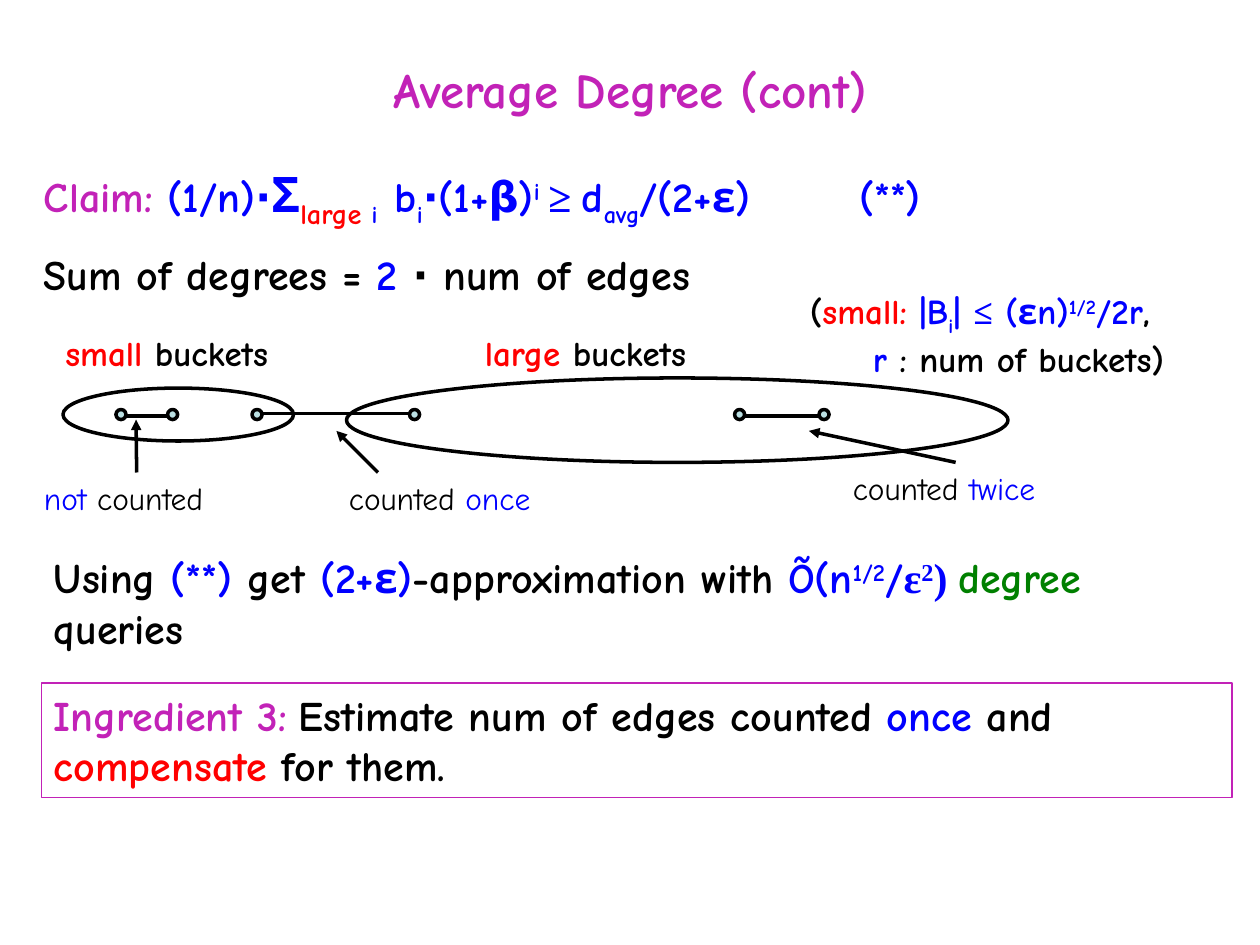
"""Build the slide on estimating the average degree from large and small buckets."""
from lxml import etree
from pptx import Presentation
from pptx.dml.color import RGBColor
from pptx.enum import shapes, text
from pptx.oxml.ns import qn
from pptx.util import Inches, Pt

COMIC, SERIF, SANS = "Comic Neue", "Times New Roman", "DejaVu Sans"
BLACK, BLUE, RED, GREEN, PURPLE = "000000", "0000FF", "FF0000", "008000", "C222B7"
SUB, SUP = "-25000", "30000"
rgb = RGBColor.from_string


def write(sp, size, bold, *lines):
    tf = sp.text_frame
    tf.word_wrap = True
    tf.auto_size = text.MSO_AUTO_SIZE.SHAPE_TO_FIT_TEXT
    tf.vertical_anchor = text.MSO_ANCHOR.TOP
    for n, runs in enumerate(lines):
        p = tf.add_paragraph() if n else tf.paragraphs[0]
        p.alignment = text.PP_ALIGN.LEFT
        if any("\t" in run[0] for run in runs):
            tabs = etree.SubElement(p._p.get_or_add_pPr(), qn("a:tabLst"))
            etree.SubElement(tabs, qn("a:tab"), pos=str(Inches(6.47)), algn="l")
        p.font.size, p.font.bold, p.font.name = Pt(size), bold, COMIC
        for words, color, *style in runs:
            r = p.add_run()
            r.text = words
            r.font.color.rgb = rgb(color)
            for item in style:
                if item in (SUB, SUP):
                    r.font._element.set("baseline", item)
                elif isinstance(item, str):
                    r.font.name = item
                else:
                    r.font.size = Pt(item)


def connect(x1, y1, x2, y2, arrow=False):
    line = s.shapes.add_connector(shapes.MSO_CONNECTOR.STRAIGHT,
                                  Inches(x1), Inches(y1), Inches(x2), Inches(y2))
    line.line.color.rgb = rgb(BLACK)
    line.line.width = Pt(2)
    if arrow:
        etree.SubElement(line.line._get_or_add_ln(), qn("a:tailEnd"), type="triangle")
    etree.SubElement(line._element.spPr, qn("a:effectLst"))
    return line


prs = Presentation()
prs.slide_width, prs.slide_height = Inches(10), Inches(7.5)
s = prs.slides.add_slide(prs.slide_layouts[6])

title = s.shapes.add_textbox(Inches(0.5), Inches(0.33), Inches(9), Inches(0.75))
write(title, 28, True, [("Average Degree (cont)", PURPLE)])
title.text_frame.auto_size = text.MSO_AUTO_SIZE.NONE
title.text_frame.vertical_anchor = text.MSO_ANCHOR.MIDDLE
title.text_frame.paragraphs[0].alignment = text.PP_ALIGN.CENTER

ovals = [(0.5, 3.08, 1.83, 0.42, None), (2.75, 3, 5.25, 0.67, None)]
edges = [(5.83, 6.5, 3.3), (2, 3.25, 3.28), (0.92, 1.33, 3.3)]
ovals += [(x, 3.25, 0.08, 0.08, "BBE0E3") for edge in edges for x in edge[:2]]
for left, top, width, height, fill in ovals:
    sp = s.shapes.add_shape(shapes.MSO_SHAPE.OVAL, Inches(left), Inches(top),
                            Inches(width), Inches(height))
    sp.shadow.inherit = False
    sp.line.color.rgb = rgb(BLACK)
    sp.line.width = Pt(2)
    if fill:
        sp.fill.solid()
        sp.fill.fore_color.rgb = rgb(fill)
    else:
        sp.fill.background()
for x1, x2, y in edges:
    connect(x1 + 0.08, y, x2, y)

statements = [
    (0.25, 1.25, 8.75, 0.57, 24, [[
        ("Claim: ", PURPLE), ("(1/n)⋅", BLUE), ("Σ", BLUE, 28),
        ("large ", RED, 28, SUB), ("i  ", BLUE, SUB), ("b", BLUE), ("i", BLUE, SUB),
        ("⋅(1+", BLUE), ("β", BLUE, SANS), (")", BLUE), ("i ", BLUE, SUP),
        ("≥ ", BLUE, SERIF), ("d", BLUE), ("avg", BLUE, SUB), ("/(2+ε)\t(**)", BLUE)]]),
    (0.25, 1.92, 9.42, 0.5, 24, [[
        ("Sum of degrees = ", BLACK), ("2", BLUE), (" ⋅ num of edges", BLACK)]]),
    (0.42, 2.58, 2, 0.43, 20, [[("small ", RED), ("buckets", BLACK)]]),
    (3.75, 2.58, 2.17, 0.43, 20, [[("large ", RED), ("buckets", BLACK)]]),
    (0.33, 4.33, 9.08, 0.9, 24, [[
        ("Using ", BLACK), ("(**)", BLUE), (" get ", BLACK), ("(2+ε)", BLUE),
        ("-approximation with ", BLACK), ("Õ(n", BLUE), ("1/2", BLUE, SUP), ("/", BLUE),
        ("ε", BLUE, SERIF), ("2", BLUE, SERIF, SUP), (") ", BLUE, SERIF),
        ("degree", GREEN), (" queries", BLACK)]]),
    (6.33, 2.25, 3.67, 0.77, 20, [
        [("(", BLACK), ("small: ", RED), ("|B", BLUE), ("i", BLUE, SUB), ("| ", BLUE),
         ("≤", BLUE, SERIF), (" (εn)", BLUE), ("1/2", BLUE, SUP), ("/2r", BLUE), (",", BLACK)],
        [("r ", BLUE), (": num of buckets)", BLACK)]]),
]
for left, top, width, height, size, lines in statements:
    sp = s.shapes.add_textbox(Inches(left), Inches(top), Inches(width), Inches(height))
    write(sp, size, True, *lines)
    for p in sp.text_frame.paragraphs[1:]:
        p._p.get_or_add_pPr().set("marL", str(Inches(0.5)))

counts = [
    (6.67, 3.67, 1.83, [("counted ", BLACK), ("twice", BLUE)], (7.58, 6.42, 3.42), True),
    (2.67, 3.75, 1.75, [("counted ", BLACK), ("once", BLUE)], (3, 2.67, 3.42), False),
    (0.25, 3.75, 1.67, [("not ", BLUE), ("counted", BLACK)], (1.08, 1.08, 3.33), True),
]
for left, top, width, runs, (x1, x2, y2), joined in counts:
    sp = s.shapes.add_textbox(Inches(left), Inches(top), Inches(width), Inches(0.4))
    write(sp, 18, False, runs)
    arrow = connect(x1, top, x2, y2, arrow=True)
    if joined:
        arrow.begin_connect(sp, 0)

box = s.shapes.add_shape(shapes.MSO_SHAPE.RECTANGLE, Inches(0.33), Inches(5.42),
                         Inches(9.45), Inches(0.91))
box.shadow.inherit = False
box.fill.background()
box.line.color.rgb = rgb(PURPLE)
box.line.width = Pt(1)
write(box, 24, True, [
    ("Ingredient 3:", PURPLE), (" ", BLACK, SANS, 20),
    ("Estimate num of edges counted ", BLACK), ("once", BLUE), (" and ", BLACK),
    ("compensate", RED), (" for them.", BLACK)])

prs.save("out.pptx")
